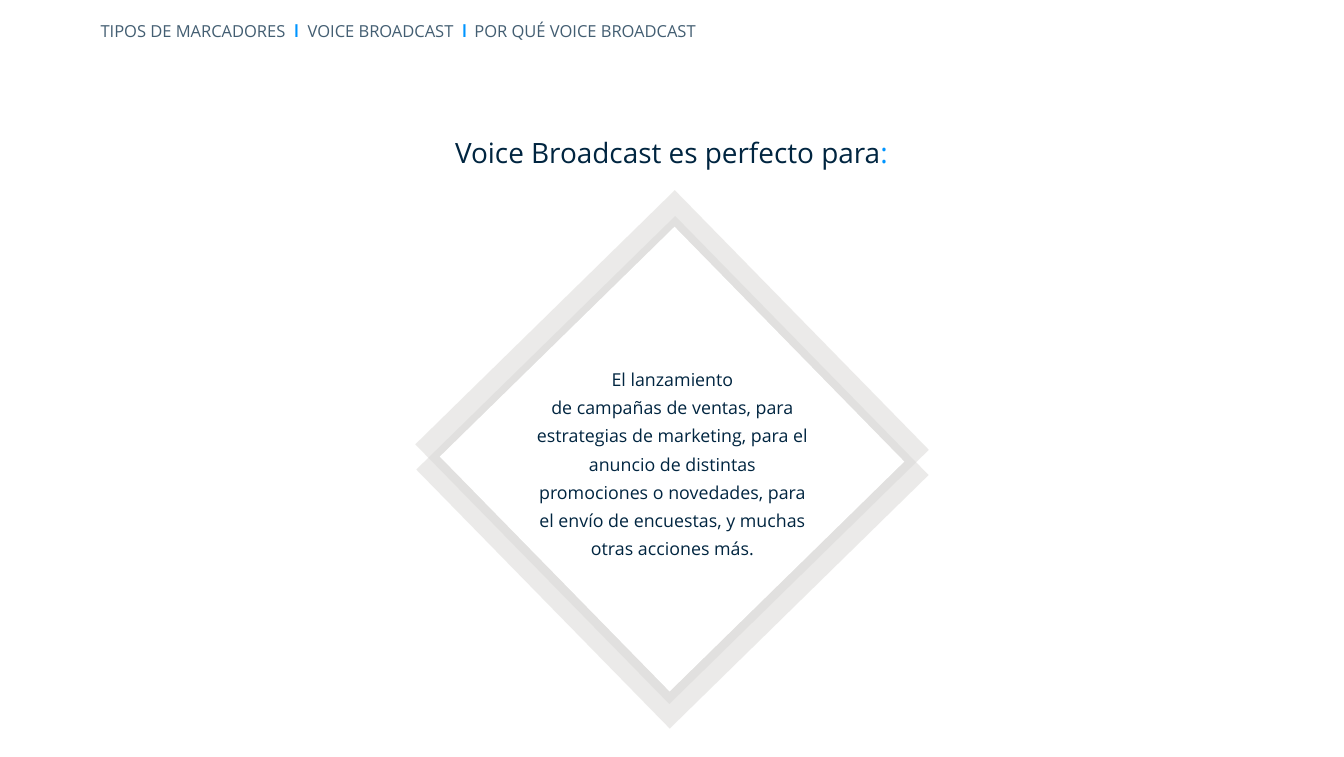
from dataclasses import dataclass

from lxml.etree import SubElement
from pptx import Presentation
from pptx.dml.color import RGBColor
from pptx.enum.shapes import MSO_SHAPE as Preset
from pptx.enum.text import MSO_ANCHOR as Anchor, PP_ALIGN as Align
from pptx.oxml.ns import qn
from pptx.slide import Slide
from pptx.util import Pt

COLORS = {
    "white": "FFFFFF",
    "navy": "002540",
    "slate": "435E72",
    "accent": "0095FF",
    "frame": "D9D8D6",
}


@dataclass
class Span:
    text: str
    size: float
    color: str
    font: str = "Open Sans"
    bold: bool = False


@dataclass
class TextBlock:
    left: float
    top: float
    width: float
    height: float
    insets: tuple[float, float, float, float]
    paragraphs: list[list[Span]]
    align: Align = Align.CENTER
    anchor: Anchor = Anchor.MIDDLE
    spacing: float = 1.0
    fill: str | None = None
    tabs: tuple[tuple[float, str], ...] = ()


@dataclass
class Diamond:
    center_x: float
    center_y: float
    side: float
    color: str
    opacity: int = 100


def rgb(name: str) -> RGBColor:
    return RGBColor.from_string(COLORS[name])


def draw_text(page: Slide, block: TextBlock) -> None:
    box = page.shapes.add_textbox(
        Pt(block.left), Pt(block.top), Pt(block.width), Pt(block.height)
    )
    if block.fill:
        box.fill.solid()
        box.fill.fore_color.rgb = rgb(block.fill)
    frame = box.text_frame
    frame.word_wrap = True
    frame.vertical_anchor = block.anchor
    left, top, right, bottom = block.insets
    frame.margin_left, frame.margin_top = Pt(left), Pt(top)
    frame.margin_right, frame.margin_bottom = Pt(right), Pt(bottom)
    for index, spans in enumerate(block.paragraphs):
        para = frame.add_paragraph() if index else frame.paragraphs[0]
        para.alignment = block.align
        para.line_spacing = block.spacing
        if block.tabs:
            stops = SubElement(para._p.get_or_add_pPr(), qn("a:tabLst"))
            for position, kind in block.tabs:
                SubElement(stops, qn("a:tab"), pos=str(Pt(position)), algn=kind)
        for span in spans:
            run = para.add_run()
            run.text = span.text
            run.font.name = span.font
            run.font.size = Pt(span.size)
            run.font.bold = span.bold
            run.font.color.rgb = rgb(span.color)


def draw_diamond(page: Slide, diamond: Diamond) -> None:
    shape = page.shapes.add_shape(
        Preset.RECTANGLE,
        Pt(diamond.center_x - diamond.side / 2),
        Pt(diamond.center_y - diamond.side / 2),
        Pt(diamond.side),
        Pt(diamond.side),
    )
    shape.rotation = 45.6
    shape.shadow.inherit = False
    shape.line.fill.background()
    shape.fill.solid()
    shape.fill.fore_color.rgb = rgb(diamond.color)
    if diamond.opacity < 100:
        color = shape._element.spPr.find(f".//{qn('a:srgbClr')}")
        SubElement(color, qn("a:alpha"), val=str(diamond.opacity * 1000))


def breadcrumb_spans(labels: list[str]) -> list[Span]:
    spans: list[Span] = []
    for index, label in enumerate(labels):
        if index:
            spans.append(Span("\t|\t", 14, "accent", "Manrope", True))
        spans.append(Span(label, 13, "slate"))
    return spans


BREADCRUMB = TextBlock(
    68.4, 7.2, 523.4, 33.8, (10.8, 10.8, 10.8, 10.8),
    [breadcrumb_spans(
        ["TIPOS DE MARCADORES", "VOICE BROADCAST", "POR QUÉ VOICE BROADCAST"]
    )],
    align=Align.LEFT,
    fill="white",
    tabs=((154.2, "ctr"), (163, "l"), (286.4, "ctr"), (294.2, "l")),
)

HEADING = TextBlock(
    299.5, 91.4, 457.9, 40.3, (7.9, 4.3, 7.9, 4.3),
    [[Span("Voice Broadcast es perfecto para", 22, "navy"), Span(":", 22, "accent")]],
    anchor=Anchor.TOP,
    spacing=1.4,
)

DIAMONDS = [
    Diamond(529.2, 371.5, 285.1, "frame", 52),
    Diamond(528.9, 351.7, 285.8, "frame", 52),
    Diamond(528.9, 361.1, 258.5, "white"),
]

USES = TextBlock(
    412.6, 263.5, 233.3, 214.6, (7.2, 7.2, 7.2, 24.4),
    [
        [Span("El lanzamiento", 14, "navy")],
        [Span(
            "de campañas de ventas, para estrategias de marketing, "
            "para el anuncio de distintas promociones o novedades, "
            "para el envío de encuestas, y muchas otras acciones más.",
            14, "navy",
        )],
    ],
    spacing=1.32,
)


def main() -> None:
    deck = Presentation()
    deck.slide_width, deck.slide_height = Pt(1057.7), Pt(595.4)
    page = deck.slides.add_slide(deck.slide_layouts[6])
    draw_text(page, BREADCRUMB)
    draw_text(page, HEADING)
    for diamond in DIAMONDS:
        draw_diamond(page, diamond)
    draw_text(page, USES)
    deck.save("out.pptx")


if __name__ == "__main__":
    main()
